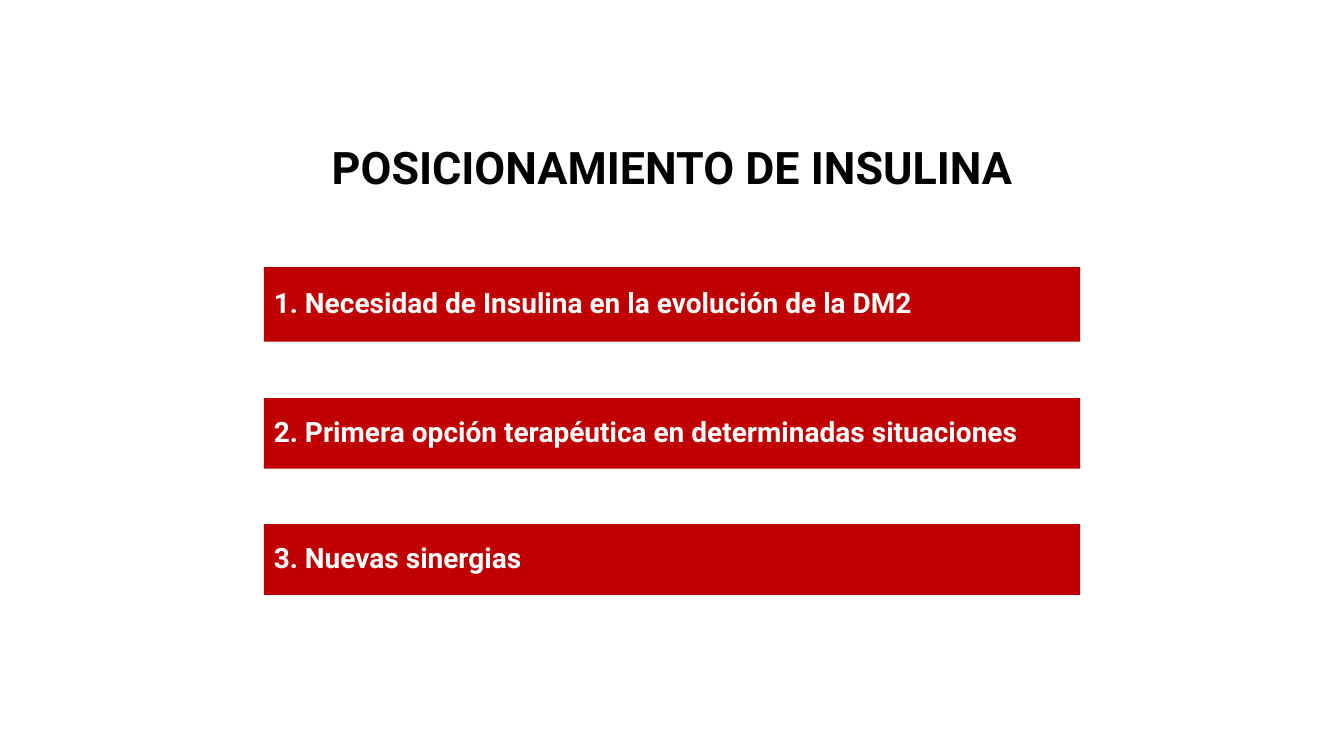
from dataclasses import dataclass

from pptx import Presentation
from pptx.dml.color import RGBColor
from pptx.enum.shapes import MSO_SHAPE
from pptx.enum.text import MSO_ANCHOR, PP_ALIGN
from pptx.util import Cm, Pt

RECTANGLE = MSO_SHAPE.RECTANGLE
MIDDLE = MSO_ANCHOR.MIDDLE
LEFT, CENTER = PP_ALIGN.LEFT, PP_ALIGN.CENTER

COLORS = {"title": "000000", "bar": "C00000", "bar text": "FFFFFF"}
FONT = "Roboto"
TITLE_ONLY = 5
BAR_LEFT, BAR_WIDTH = 6.65, 20.57


@dataclass
class Bar:
    text: str
    top: float
    height: float = 1.78


BARS = [
    Bar("1. Necesidad de Insulina en la evolución de la DM2", 6.73, 1.88),
    Bar("2. Primera opción terapéutica en determinadas situaciones", 10.03),
    Bar("3. Nuevas sinergias", 13.21),
]


def write_text(shape, text: str, size: int, color: str, alignment) -> None:
    frame = shape.text_frame
    frame.text = text
    frame.word_wrap = True
    frame.vertical_anchor = MIDDLE
    para = frame.paragraphs[0]
    para.alignment = alignment
    para.line_spacing = 0.9
    para.font.name = FONT
    para.font.size = Pt(size)
    para.font.bold = True
    para.font.color.rgb = RGBColor.from_string(COLORS[color])


def draw_bar(page, bar: Bar) -> None:
    box = page.shapes.add_shape(
        RECTANGLE, Cm(BAR_LEFT), Cm(bar.top), Cm(BAR_WIDTH), Cm(bar.height)
    )
    box.shadow.inherit = False
    box.fill.solid()
    box.fill.fore_color.rgb = RGBColor.from_string(COLORS["bar"])
    box.line.fill.background()
    write_text(box, bar.text, 20, "bar text", LEFT)


def main() -> None:
    deck = Presentation()
    deck.slide_width, deck.slide_height = Cm(33.87), Cm(19.05)
    page = deck.slides.add_slide(deck.slide_layouts[TITLE_ONLY])

    # Title
    title = page.shapes.title
    title.left, title.top = Cm(2.34), Cm(2.44)
    title.width, title.height = Cm(29.21), Cm(3.68)
    write_text(title, "POSICIONAMIENTO DE INSULINA", 32, "title", CENTER)

    # Numbered topics
    for bar in BARS:
        draw_bar(page, bar)

    deck.save("out.pptx")


if __name__ == "__main__":
    main()
